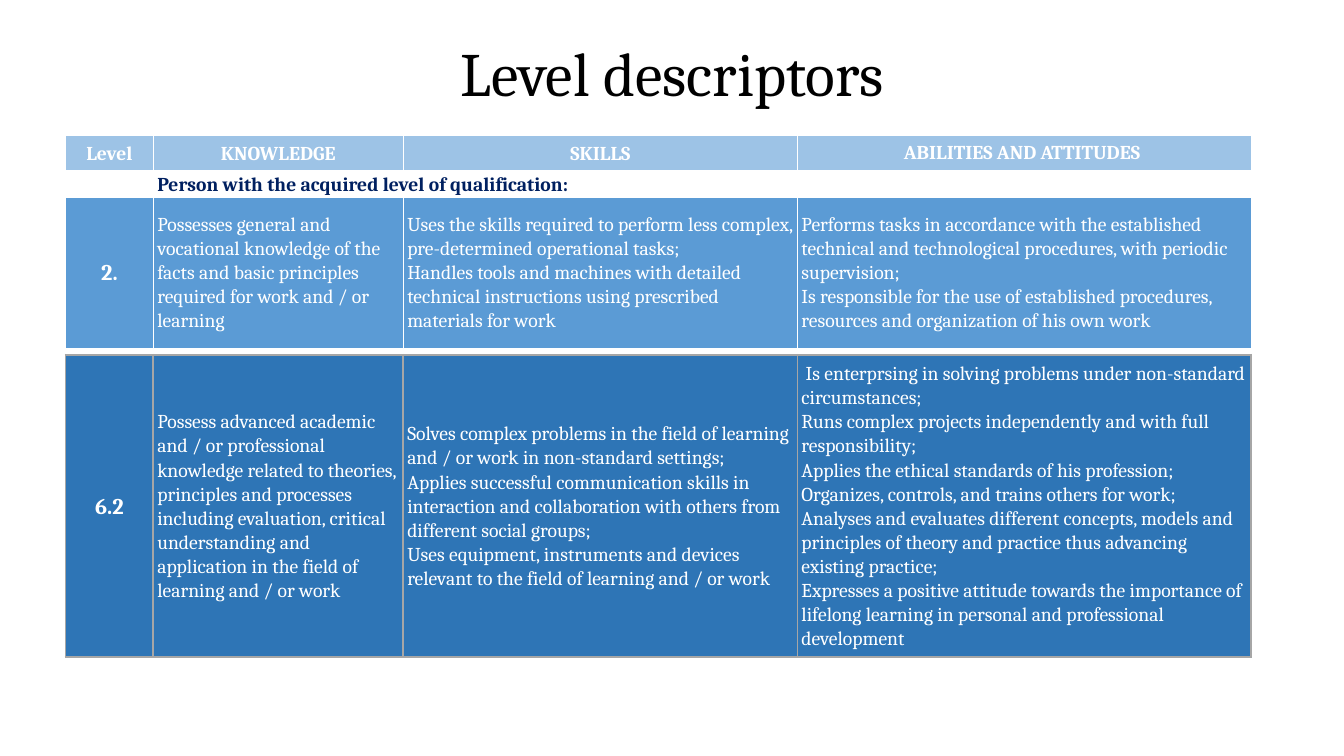
from dataclasses import dataclass

from lxml.etree import SubElement
from pptx import Presentation
from pptx.dml.color import RGBColor
from pptx.enum.text import MSO_ANCHOR as Anchor, PP_ALIGN as Align
from pptx.oxml.ns import qn
from pptx.slide import Slide
from pptx.table import Table, _Cell as Cell
from pptx.text.text import _Paragraph as Paragraph
from pptx.util import Emu, Inches, Pt

COLORS = {
    "black": "000000", "white": "FFFFFF", "navy": "002060", "grey": "A6A6A6",
    "header": "9DC3E6", "level 2": "5B9BD5", "level 6": "2E75B6",
}
FONT = "Cambria"
SLIDE_WIDTH, SLIDE_HEIGHT = Inches(13.33), Inches(7.5)

# Percentages of the slide's width
TABLE_LEFT = 4.88
COLUMN_WIDTHS = (6.53, 18.6, 29.33, 33.76)


@dataclass(frozen=True)
class Entry:
    lines: tuple[str, ...] = ("",)
    color: str = "white"
    size: int = 14
    bold: bool = False
    align: Align = Align.LEFT
    spacing: float = 1.07
    span: int = 1


@dataclass(frozen=True)
class Border:
    color: str
    side: float
    top: float
    bottom: float


@dataclass(frozen=True)
class Row:
    height: float  # percentage of the slide's height
    fill: str
    border: Border
    entries: tuple[Entry, ...]


def heading(text: str, size: int = 14, spacing: float = 1.07) -> Entry:
    return Entry((text,), size=size, bold=True, align=Align.CENTER, spacing=spacing)


def across(share: float) -> Emu:
    return Emu(round(SLIDE_WIDTH * share / 100))


def down(share: float) -> Emu:
    return Emu(round(SLIDE_HEIGHT * share / 100))


GREY_BORDER = Border("grey", 1.5, 1.5, 1.5)

LEVEL_2_ROWS = (
    Row(4.8, "header", Border("white", 1, 1, 3), (
        heading("Level"),
        heading("KNOWLEDGE"),
        heading("SKILLS"),
        heading("ABILITIES AND ATTITUDES ", spacing=1.0),
    )),
    Row(3.2, "white", Border("white", 1, 3, 3), (
        Entry(),
        Entry(("Person with the acquired level of qualification:",),
              "navy", bold=True, align=Align.JUSTIFY, span=3),
    )),
    Row(20.13, "level 2", Border("white", 1, 3, 1), (
        heading("2.", 16),
        Entry(("Possesses general and vocational knowledge of the facts and basic "
               "principles required for work and / or learning",)),
        Entry(("Uses the skills required to perform less complex, pre-determined "
               "operational tasks;",
               "Handles tools and machines with detailed technical instructions using "
               "prescribed materials for work")),
        Entry(("Performs tasks in accordance with the established technical and "
               "technological procedures, with periodic supervision;",
               "Is responsible for the use of established procedures, resources and "
               "organization of his own work")),
    )),
)

LEVEL_6_ROWS = (
    Row(40, "level 6", GREY_BORDER, (
        heading("6.2", 16),
        Entry(("Possess advanced academic and / or professional knowledge related to "
               "theories, principles and processes including evaluation, critical "
               "understanding and application in the field of learning and / or work",)),
        Entry(("Solves complex problems in the field of learning and / or work in "
               "non-standard settings;",
               "Applies successful communication skills in interaction and collaboration "
               "with others from different social groups;",
               "Uses equipment, instruments and devices relevant to the field of learning "
               "and / or work")),
        Entry((" Is enterprsing in solving problems under non-standard circumstances;",
               "Runs complex projects independently and with full responsibility;",
               "Applies the ethical standards of his profession;",
               "Organizes, controls, and trains others for work;",
               "Analyses and evaluates different concepts, models and principles of theory "
               "and practice thus advancing existing practice;",
               "Expresses a positive attitude towards the importance of lifelong learning "
               "in personal and professional development")),
    )),
)


def style_paragraph(paragraph: Paragraph, entry: Entry) -> None:
    paragraph.alignment = entry.align
    paragraph.line_spacing = entry.spacing
    font = paragraph.font
    font.name, font.size, font.bold = FONT, Pt(entry.size), entry.bold
    font.color.rgb = RGBColor.from_string(COLORS[entry.color])


def style_cell(cell: Cell, row: Row) -> None:
    cell.margin_left = cell.margin_right = Inches(0.04)
    cell.margin_top = cell.margin_bottom = 0
    cell.vertical_anchor = Anchor.MIDDLE
    # Borders stand before the fill in the cell's properties
    properties = cell._tc.get_or_add_tcPr()
    border = row.border
    widths = {"lnL": border.side, "lnR": border.side,
              "lnT": border.top, "lnB": border.bottom}
    for tag, width in widths.items():
        line = SubElement(properties, qn(f"a:{tag}"), w=str(Pt(width)))
        solid = SubElement(line, qn("a:solidFill"))
        SubElement(solid, qn("a:srgbClr"), val=COLORS[border.color])
    cell.fill.solid()
    cell.fill.fore_color.rgb = RGBColor.from_string(COLORS[row.fill])


def fill_row(table: Table, index: int, row: Row) -> None:
    table.rows[index].height = down(row.height)
    for column in range(len(COLUMN_WIDTHS)):
        style_cell(table.cell(index, column), row)
    column = 0
    for entry in row.entries:
        cell = table.cell(index, column)
        if entry.span > 1:
            cell.merge(table.cell(index, column + entry.span - 1))
        cell.text_frame.text = "\n".join(entry.lines)
        for paragraph in cell.text_frame.paragraphs:
            style_paragraph(paragraph, entry)
        column += entry.span


def draw_table(slide: Slide, top: float, rows: tuple[Row, ...]) -> None:
    table = slide.shapes.add_table(
        len(rows), len(COLUMN_WIDTHS), across(TABLE_LEFT), down(top),
        across(sum(COLUMN_WIDTHS)), down(sum(row.height for row in rows))).table
    table.first_row = table.horz_banding = False
    for column, width in zip(table.columns, COLUMN_WIDTHS):
        column.width = across(width)
    for index, row in enumerate(rows):
        fill_row(table, index, row)


def draw_title(slide: Slide, text: str) -> None:
    box = slide.shapes.add_textbox(across(6.9), down(5.33), across(86.27), down(9.73))
    frame = box.text_frame
    frame.word_wrap = True
    frame.vertical_anchor = Anchor.MIDDLE
    frame.text = text
    style_paragraph(frame.paragraphs[0],
                    Entry(color="black", size=44, align=Align.CENTER, spacing=0.9))


def main() -> None:
    presentation = Presentation()
    presentation.slide_width, presentation.slide_height = SLIDE_WIDTH, SLIDE_HEIGHT
    slide = presentation.slides.add_slide(presentation.slide_layouts[6])
    draw_title(slide, "Level descriptors")
    draw_table(slide, 17.87, LEVEL_2_ROWS)
    draw_table(slide, 46.93, LEVEL_6_ROWS)
    presentation.save("out.pptx")


if __name__ == "__main__":
    main()
